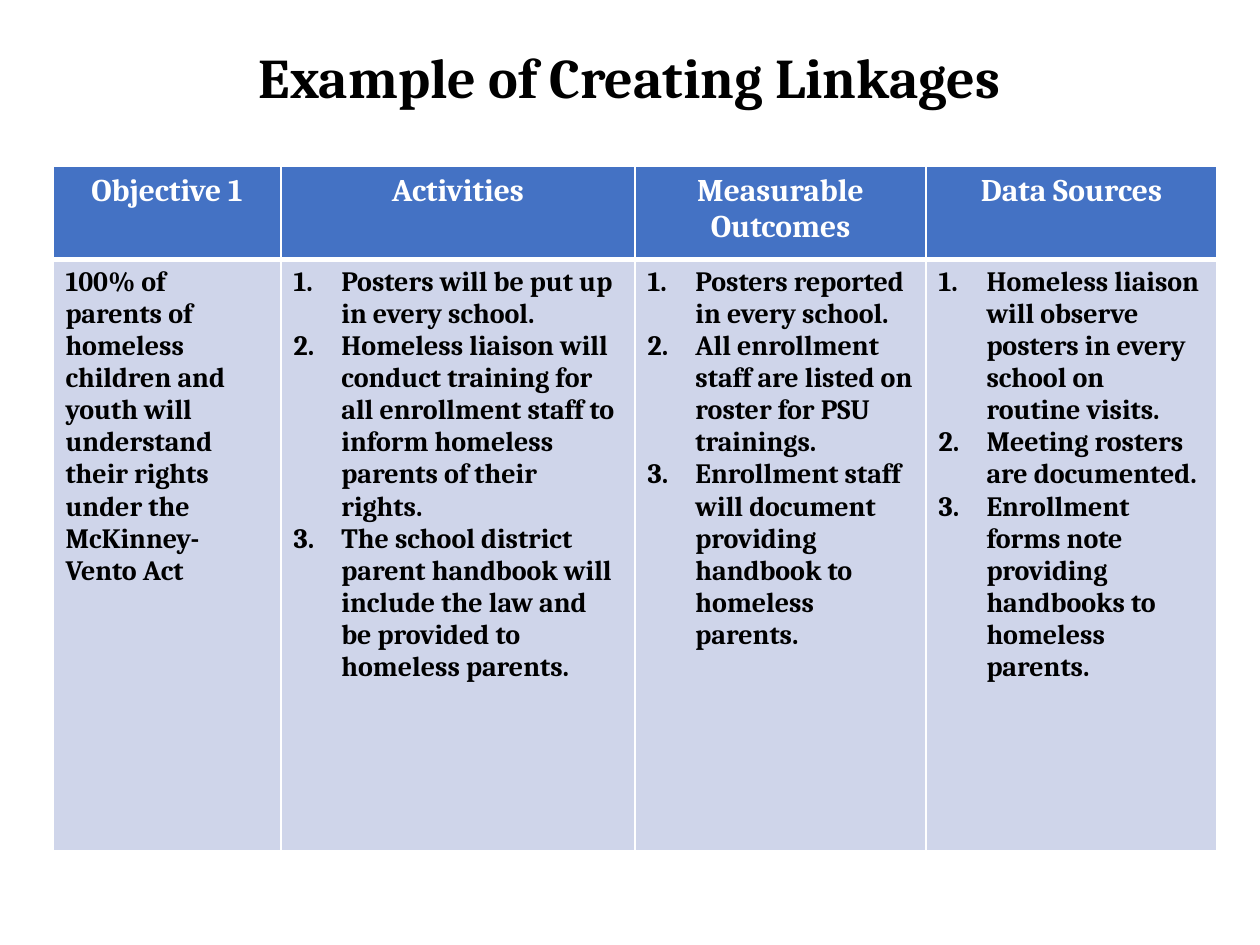
from pptx import Presentation
from pptx.dml.color import RGBColor
from pptx.enum.text import PP_ALIGN as Align
from pptx.oxml.ns import qn
from pptx.util import Inches, Pt
from lxml.etree import SubElement

FONT = "Cambria"
BLACK, WHITE = "000000", "FFFFFF"
HEADER_FILL, BODY_FILL = "4472C4", "CFD5EA"
COLUMN_WIDTHS = [1.81, 2.81, 2.31, 2.31]
ROW_HEIGHTS = [0.74, 4.69]
HEADINGS = ["Objective 1", "Activities", "Measurable Outcomes", "Data Sources"]
OBJECTIVE = (
    "100% of parents of homeless children and youth will understand "
    "their rights under the McKinney-Vento Act"
)
NUMBERED_LISTS = [
    [
        "Posters will be put up in every school.",
        "Homeless liaison will conduct training for all enrollment staff "
        "to inform homeless parents of their rights.",
        "The school district parent handbook will include the law and "
        "be provided to homeless parents.",
    ],
    [
        "Posters reported in every school.",
        "All enrollment staff are listed on roster for PSU trainings.",
        "Enrollment staff will document providing handbook to homeless parents.",
    ],
    [
        "Homeless liaison will observe posters in every school on routine visits.",
        "Meeting rosters are documented.",
        "Enrollment forms note providing handbooks to homeless parents.",
    ],
]


def color(hex_string):
    return RGBColor.from_string(hex_string)


def format_runs(paragraph, size, hex_string):
    for run in paragraph.runs:
        run.font.name = FONT
        run.font.size = Pt(size)
        run.font.bold = True
        run.font.color.rgb = color(hex_string)


def number_paragraph(paragraph):
    properties = paragraph._p.get_or_add_pPr()
    properties.set("marL", str(Inches(0.38)))
    properties.set("indent", str(Inches(-0.38)))
    SubElement(properties, qn("a:buFont"), typeface="+mj-lt")
    SubElement(properties, qn("a:buAutoNum"), type="arabicPeriod")


def set_borders(cell, top, bottom):
    properties = cell._tc.get_or_add_tcPr()
    for side, width in {"L": 1, "R": 1, "T": top, "B": bottom}.items():
        line = SubElement(properties, qn(f"a:ln{side}"), w=str(Pt(width)))
        fill = SubElement(line, qn("a:solidFill"))
        SubElement(fill, qn("a:srgbClr"), val=WHITE)


def fill_cell(cell, hex_string, top, bottom):
    set_borders(cell, top, bottom)
    cell.fill.solid()
    cell.fill.fore_color.rgb = color(hex_string)


def write_header(cell, heading):
    fill_cell(cell, HEADER_FILL, top=1, bottom=3)
    cell.text_frame.text = heading
    paragraph = cell.text_frame.paragraphs[0]
    paragraph.alignment = Align.CENTER
    format_runs(paragraph, 18, WHITE)


def write_body(cell, items, numbered):
    fill_cell(cell, BODY_FILL, top=3, bottom=1)
    cell.text_frame.text = "\n".join(items)
    for paragraph in cell.text_frame.paragraphs:
        if numbered:
            number_paragraph(paragraph)
        format_runs(paragraph, 16, BLACK)


def add_title(slide, text):
    box = slide.shapes.add_textbox(Inches(0.5), Inches(0.35), Inches(9), Inches(0.73))
    box.text_frame.word_wrap = True
    box.text_frame.text = text
    paragraph = box.text_frame.paragraphs[0]
    paragraph.alignment = Align.CENTER
    paragraph.line_spacing = 0.9
    format_runs(paragraph, 32, BLACK)


def add_linkage_table(slide):
    table = slide.shapes.add_table(
        len(ROW_HEIGHTS), len(COLUMN_WIDTHS), Inches(0.42), Inches(1.32),
        Inches(sum(COLUMN_WIDTHS)), Inches(sum(ROW_HEIGHTS)),
    ).table
    table.horz_banding = False
    for column, width in zip(table.columns, COLUMN_WIDTHS):
        column.width = Inches(width)
    for row, height in zip(table.rows, ROW_HEIGHTS):
        row.height = Inches(height)
    for index, (heading, items) in enumerate(zip(HEADINGS, [[OBJECTIVE], *NUMBERED_LISTS])):
        write_header(table.cell(0, index), heading)
        write_body(table.cell(1, index), items, numbered=index > 0)


def main():
    presentation = Presentation()
    presentation.slide_width = Inches(10)
    presentation.slide_height = Inches(7.5)
    slide = presentation.slides.add_slide(presentation.slide_layouts[6])
    add_title(slide, "Example of Creating Linkages")
    add_linkage_table(slide)
    presentation.save("out.pptx")


if __name__ == "__main__":
    main()
